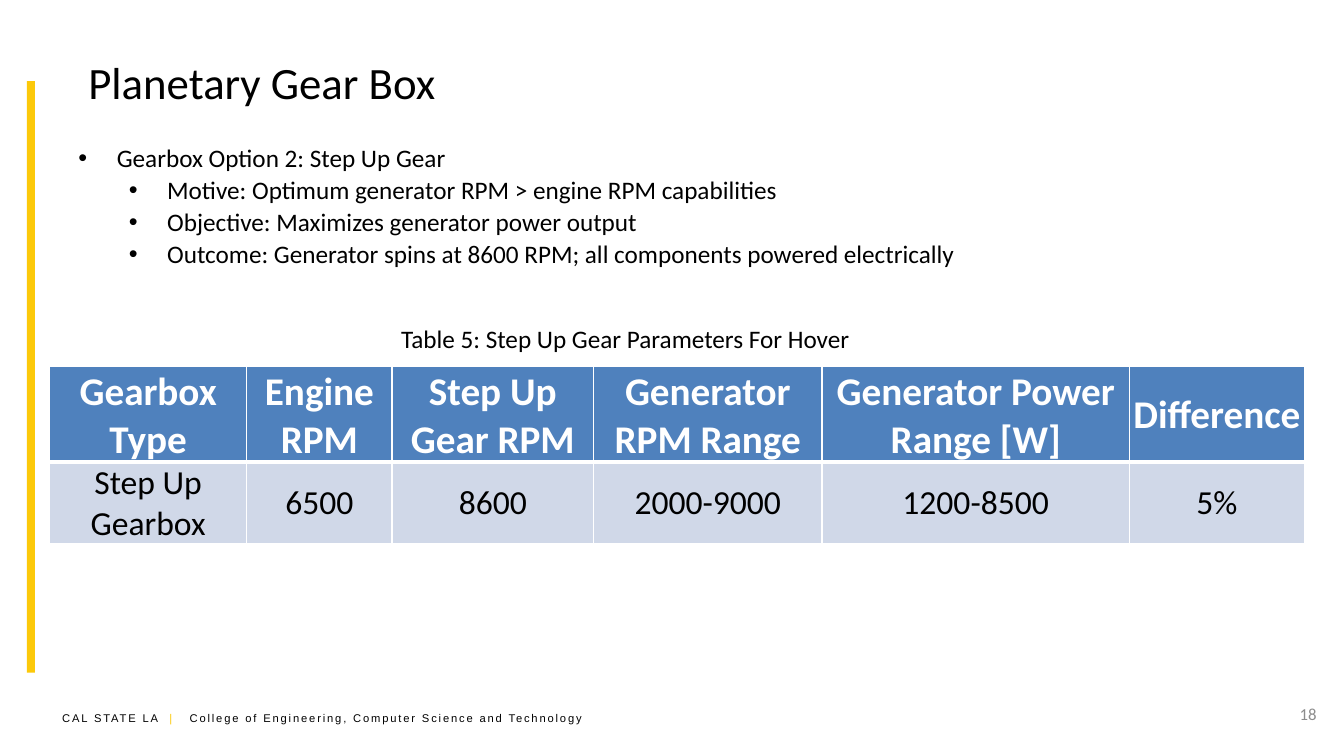
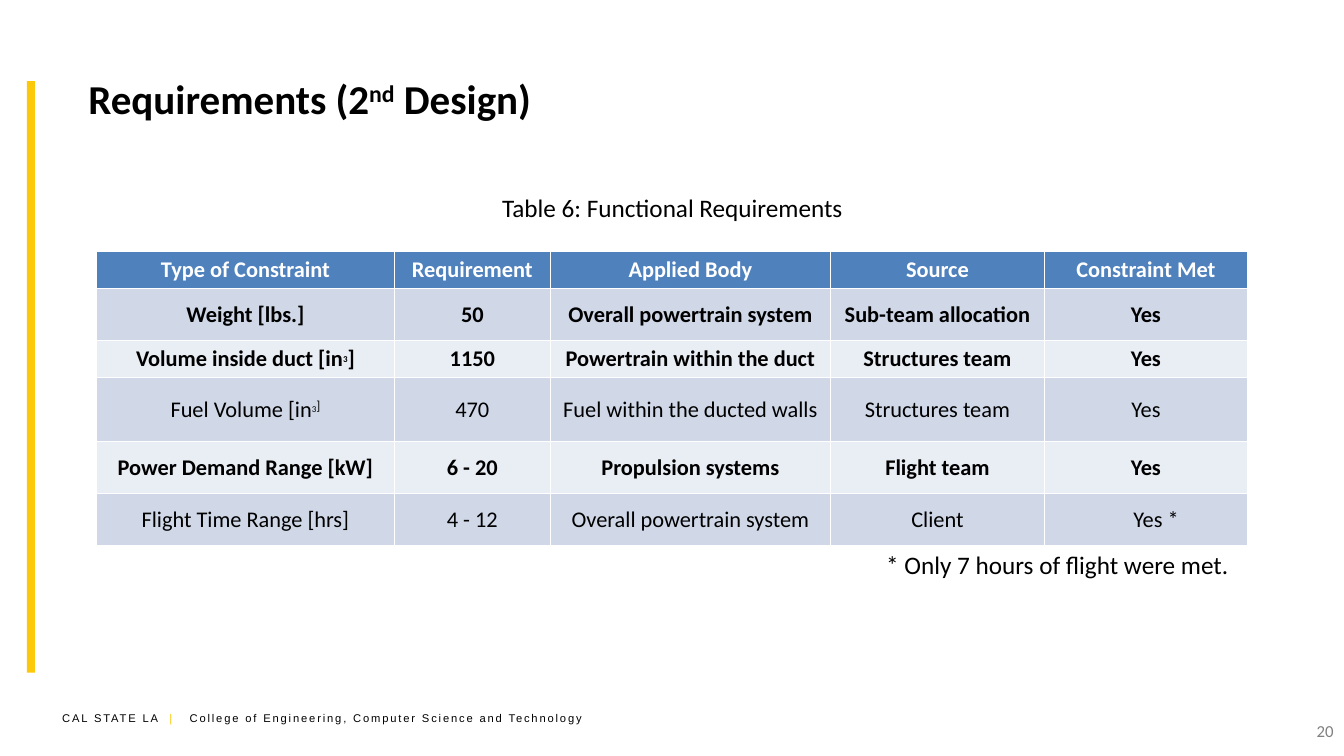
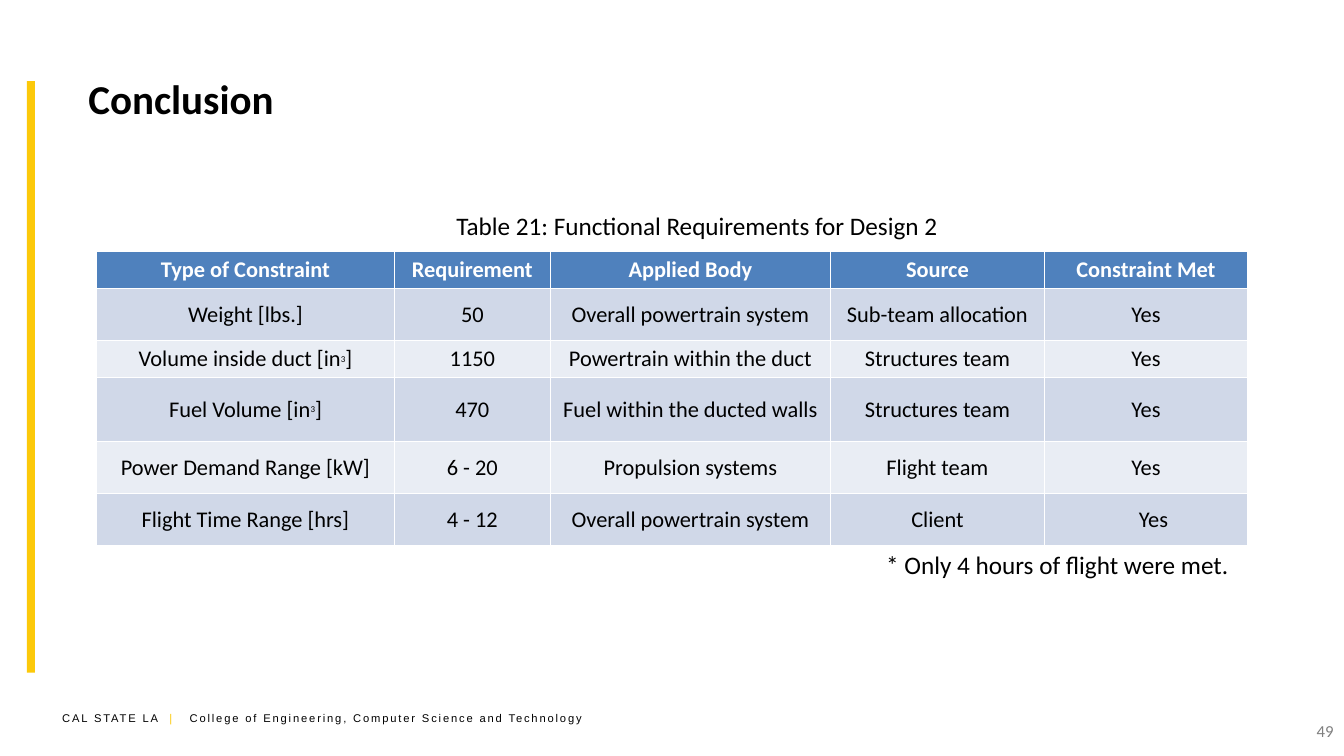
from lxml.etree import SubElement
from pptx import Presentation
from pptx.dml.color import RGBColor
from pptx.enum.shapes import MSO_SHAPE
from pptx.enum.text import MSO_ANCHOR, PP_ALIGN
from pptx.oxml.ns import qn
from pptx.util import Pt

rgb = RGBColor.from_string
BLACK, WHITE, GOLD = "000000", "FFFFFF", "FCC90A"
HEADER_BLUE, BANDS = "4F81BD", ("D0D8E8", "E9EDF4")
BULLET_INDENT = 27.36


def add_text_box(slide, box, anchor=MSO_ANCHOR.TOP, align=PP_ALIGN.LEFT):
    frame = slide.shapes.add_textbox(*map(Pt, box)).text_frame
    frame.word_wrap = True
    frame.vertical_anchor = anchor
    frame.paragraphs[0].alignment = align
    return frame


def add_run(paragraph, text, size, color=BLACK, bold=False, font="Calibri", **attributes):
    run = paragraph.add_run()
    run.text = text
    run.font.name = font
    run.font.size = Pt(size)
    run.font.bold = bold
    run.font.color.rgb = rgb(color)
    for key, value in attributes.items():
        run.font._element.set(key, value)


SUPER = "30000"
constraints = [
    ["Type of Constraint", "Requirement", "Applied Body", "Source", "Constraint Met"],
    ["Weight [lbs.]", "50", "Overall powertrain system", "Sub-team allocation", "Yes"],
    [[("Volume inside duct [in", 16, "0"), ("3", 11, SUPER), ("]", 16, "0")],
     "1150", "Powertrain within the duct", "Structures team", "Yes"],
    [[("Fuel Volume [in", 16, "0"), ("3", 11, SUPER), ("]", 16, "0")],
     "470", "Fuel within the ducted walls", "Structures team", "Yes"],
    ["Power Demand Range [kW]", "6 - 20", "Propulsion systems", "Flight team", "Yes"],
    ["Flight Time Range [hrs]", "4 - 12", "Overall powertrain system", "Client", "Yes"],
]
second_design = [list(row) for row in constraints]
second_design[3][0] = [("Fuel Volume [in", 16, "0"), ("3", 11, SUPER), ("]", 16, SUPER)]
second_design[5][4] = "Yes *"

gearbox = [
    ["Gearbox Type", "Engine RPM", "Step Up Gear RPM", "Generator RPM Range",
     "Generator Power Range [W]", "Difference"],
    ["Step Up Gearbox", "6500", "8600", "2000-9000", "1200-8500", "5%"],
]
gearbox_table = dict(
    origin=(35.5, 262), columns=(140.7, 103.9, 143.9, 163.2, 219.6, 125), heights=(68, 58.5),
    sizes=(28, 24), margins=(0.72, 0.72, 0.72, 0), line=1, header_line=3,
)
constraint_table = dict(
    origin=(69.1, 179.5), columns=(212.5, 111.6, 200, 152.9, 145),
    heights=(26.6, 37, 26.6, 46, 37, 37),
    sizes=(16, 16), margins=(6.5, 3.6, 6.5, 3.6), line=0.75, header_line=1.58,
)
title_box = (56, 25.2, 855, 90)
note_box = (619.2, 388.8, 272.2, 28.8)
page_box = (735.8, 511.2, 224, 28.8)

pages = [
    dict(
        title=[("Planetary Gear Box", "0")], title_box=(56, 13, 855, 90),
        title_size=32, title_bold=False,
        bullets=[
            (0, "Gearbox Option 2: Step Up Gear"),
            (1, "Motive: Optimum generator RPM > engine RPM capabilities"),
            (1, "Objective: Maximizes generator power output"),
            (1, "Outcome: Generator spins at 8600 RPM; all components powered electrically"),
        ],
        table=gearbox_table, rows=gearbox, bold_rows=(0,), last_shift=0,
        captions=[("Table 5: Step Up Gear Parameters For Hover", (206.6, 227.5, 480.2, 28.8))],
        number="18", number_box=(731.5, 499, 216, 28.8), number_color="8C8C8C",
    ),
    dict(
        title=[("Requirements (2", "0"), ("nd", SUPER), (" Design)", "0")], title_box=title_box,
        title_size=29.3, title_bold=True, bullets=[],
        table=constraint_table, rows=second_design, bold_rows=(0, 1, 2, 4), last_shift=14.4,
        captions=[("Table 6: Functional Requirements", (344.2, 134, 272.2, 28.8)),
                  ("* Only 7 hours of flight were met.", note_box)],
        number="20", number_box=page_box, number_color="808080",
    ),
    dict(
        title=[("Conclusion", "0")], title_box=title_box,
        title_size=29.3, title_bold=True, bullets=[],
        table=constraint_table, rows=constraints, bold_rows=(0,), last_shift=10.8,
        captions=[("Table 21: Functional Requirements for Design 2", (311.8, 147, 372.2, 28.8)),
                  ("* Only 4 hours of flight were met.", note_box)],
        number="49", number_box=page_box, number_color="808080",
    ),
]

deck = Presentation()
deck.slide_width, deck.slide_height = Pt(960), Pt(540)

for page in pages:
    slide = deck.slides.add_slide(deck.slide_layouts[6])

    footer = add_text_box(slide, (37.4, 504.7, 398.2, 17.3)).paragraphs[0]
    tabs = SubElement(footer._p.get_or_add_pPr(), qn("a:tabLst"))
    SubElement(tabs, qn("a:tab"), pos=str(Pt(91)), algn="l")
    for text, color in (("CAL STATE LA ", BLACK), (" |\t", GOLD),
                        ("College of Engineering, Computer Science and Technology", BLACK)):
        add_run(footer, text, 8, color, font="Arial", spc="130")

    side_bar = slide.shapes.add_shape(MSO_SHAPE.RECTANGLE, Pt(19.2), Pt(58), Pt(5.8), Pt(422.6))
    side_bar.shadow.inherit = False
    side_bar.fill.solid()
    side_bar.fill.fore_color.rgb = rgb(GOLD)
    side_bar.line.fill.background()

    title = add_text_box(slide, page["title_box"], MSO_ANCHOR.MIDDLE).paragraphs[0]
    for text, baseline in page["title"]:
        add_run(title, text, page["title_size"], bold=page["title_bold"], baseline=baseline)

    if page["bullets"]:
        outline = add_text_box(slide, (49, 100.8, 728, 98.6))
        for index, (level, text) in enumerate(page["bullets"]):
            point = outline.add_paragraph() if index else outline.paragraphs[0]
            properties = point._p.get_or_add_pPr()
            properties.set("marL", str(Pt(BULLET_INDENT + 36 * level)))
            properties.set("indent", str(-Pt(BULLET_INDENT)))
            SubElement(properties, qn("a:buFont"), typeface="Arial")
            SubElement(properties, qn("a:buChar"), char="•")
            point.level = level
            point.line_spacing = 0.9
            if index:
                point.space_before = Pt(3.3)
            add_run(point, text, 18)

    layout, rows = page["table"], page["rows"]
    columns, heights = layout["columns"], layout["heights"]
    extent = (*layout["origin"], sum(columns), sum(heights))
    grid = slide.shapes.add_table(len(rows), len(columns), *map(Pt, extent)).table
    grid.horz_banding = False
    for column, width in zip(grid.columns, columns):
        column.width = Pt(width)
    for row_index, row in enumerate(rows):
        grid.rows[row_index].height = Pt(heights[row_index])
        is_header = row_index == 0
        size = layout["sizes"][0 if is_header else 1]
        for column_index, content in enumerate(row):
            cell = grid.cell(row_index, column_index)
            left, top, right, bottom = layout["margins"]
            if row_index == len(rows) - 1 and column_index == len(row) - 1:
                left += page["last_shift"]
            cell.margin_left, cell.margin_top = Pt(left), Pt(top)
            cell.margin_right, cell.margin_bottom = Pt(right), Pt(bottom)
            cell.vertical_anchor = MSO_ANCHOR.MIDDLE
            for side in ("lnL", "lnR", "lnT", "lnB"):
                under_header = (row_index, side) in ((0, "lnB"), (1, "lnT"))
                weight = layout["header_line" if under_header else "line"]
                border = SubElement(cell._tc.get_or_add_tcPr(), qn("a:" + side), w=str(Pt(weight)))
                SubElement(SubElement(border, qn("a:solidFill")), qn("a:srgbClr"), val=WHITE)
            cell.fill.solid()
            cell.fill.fore_color.rgb = rgb(HEADER_BLUE if is_header else BANDS[(row_index - 1) % 2])
            entry = cell.text_frame.paragraphs[0]
            entry.alignment = PP_ALIGN.CENTER
            pieces = [(content, size, "0")] if isinstance(content, str) else content
            for text, piece_size, baseline in pieces:
                add_run(entry, text, piece_size, WHITE if is_header else BLACK,
                        row_index in page["bold_rows"], baseline=baseline)

    for text, box in page["captions"]:
        add_run(add_text_box(slide, box, align=PP_ALIGN.CENTER).paragraphs[0], text, 18)

    number = add_text_box(slide, page["number_box"], align=PP_ALIGN.RIGHT).paragraphs[0]
    add_run(number, page["number"], 12, page["number_color"])

deck.save("out.pptx")
